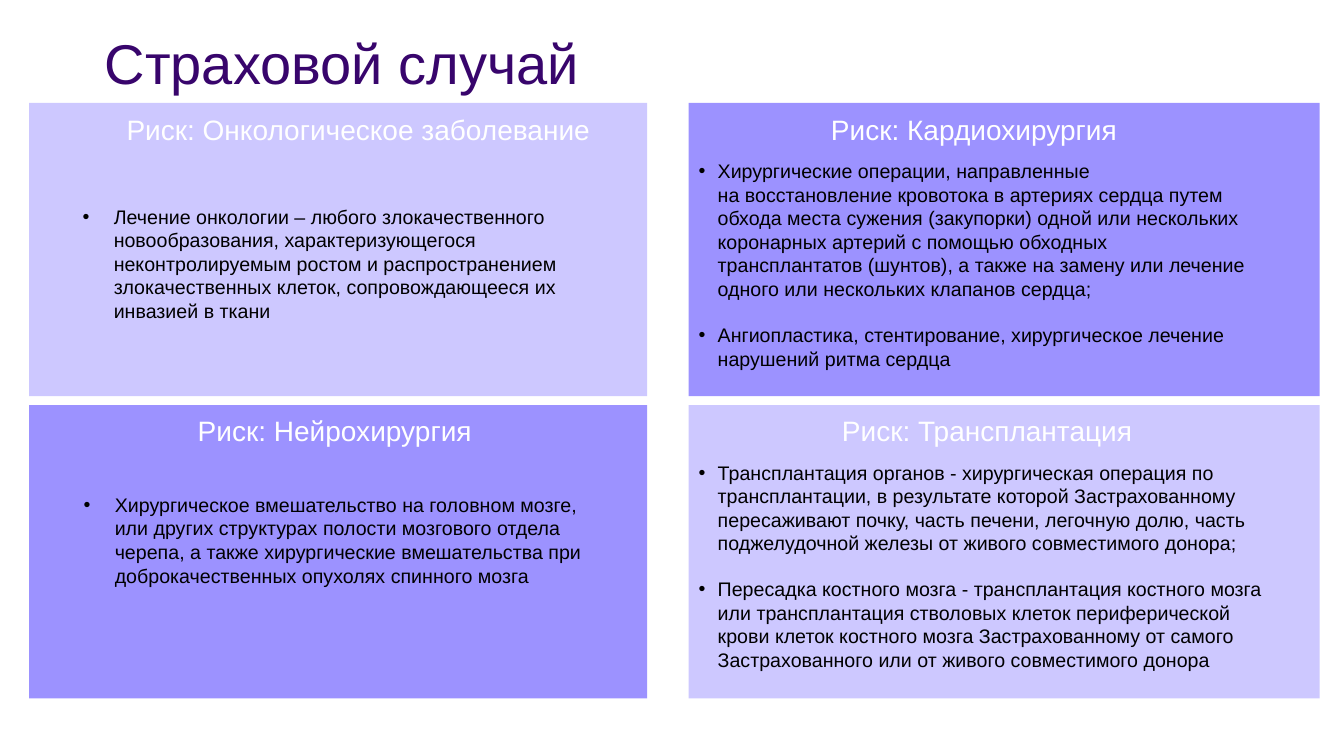
"""Build the slide of four insured risks in a two by two grid."""
from lxml.etree import SubElement
from pptx import Presentation
from pptx.dml.color import RGBColor
from pptx.enum.shapes import MSO_SHAPE as Shape
from pptx.enum.text import MSO_ANCHOR as Anchor, MSO_AUTO_SIZE as AutoSize, PP_ALIGN as Align
from pptx.oxml.ns import qn
from pptx.util import Inches, Pt

HEADLINE = "Страховой случай"
FONT, DARK, WHITE, BLACK = "Arial", "38056C", "FFFFFF", "000000"
LIGHT, STRONG = "CDC8FF", "9C92FF"
COLUMNS = [(0.29, 6.13), (6.83, 6.26)]
ROWS = [(1.02, 1.07), (4.02, 4.05)]
PANEL_HEIGHT, HEADING_HEIGHT = 2.91, 0.44
INDENTS = [0.31, 0.19]
RISKS = [
    {"cell": (0, 0), "heading": "Риск: Онкологическое заболевание",
     "heading_span": (1.14, 4.83), "body": (0.72, 1.98, 5.38, 1.6),
     "points": ["Лечение онкологии – любого злокачественного новообразования, "
                "характеризующегося неконтролируемым ростом и распространением "
                "злокачественных клеток, сопровождающееся их инвазией в ткани"]},
    {"cell": (1, 0), "heading": "Риск: Кардиохирургия",
     "heading_span": (8.13, 3.06), "body": (6.83, 1.53, 5.66, 2.22),
     "points": ["Хирургические операции, направленные \n"
                "на восстановление кровотока в артериях сердца путем обхода места "
                "сужения (закупорки) одной или нескольких коронарных артерий с помощью "
                "обходных трансплантатов (шунтов), а также на замену или лечение "
                "одного или нескольких клапанов сердца;",
                "Ангиопластика, стентирование, хирургическое лечение "
                "нарушений ритма сердца"]},
    {"cell": (0, 1), "heading": "Риск: Нейрохирургия",
     "heading_span": (1.85, 2.94), "body": (0.73, 4.84, 5.32, 1.04),
     "points": ["Хирургическое вмешательство на головном мозге, или других структурах "
                "полости мозгового отдела черепа, а также хирургические вмешательства "
                "при доброкачественных опухолях спинного мозга"]},
    {"cell": (1, 1), "heading": "Риск: Трансплантация",
     "heading_span": (8.24, 3.1), "body": (6.83, 4.52, 5.85, 2.46),
     "points": ["Трансплантация органов - хирургическая операция по трансплантации, "
                "в результате которой Застрахованному пересаживают почку, часть печени, "
                "легочную долю, часть поджелудочной железы от живого совместимого донора;",
                "Пересадка костного мозга - трансплантация костного мозга или "
                "трансплантация стволовых клеток периферической крови клеток костного "
                "мозга Застрахованному от самого Застрахованного или от живого "
                "совместимого донора"]},
]


def rgb(colour):
    """Turn a hex string into a colour."""
    return RGBColor.from_string(colour)


def write(paragraph, text, size, colour):
    """Add text as formatted runs, with a line break at each newline."""
    for number, line in enumerate(text.split("\n")):
        if number:
            paragraph.add_line_break()
        run = paragraph.add_run()
        run.text = line
        run.font.name, run.font.size = FONT, Pt(size)
        run.font.color.rgb = rgb(colour)


def add_panel(slide, column, row):
    """Draw the coloured rectangle of one grid cell."""
    left, width = COLUMNS[column]
    box = map(Inches, (left, ROWS[row][0], width, PANEL_HEIGHT))
    panel = slide.shapes.add_shape(Shape.RECTANGLE, *box)
    panel.shadow.inherit = False
    panel.fill.solid()
    panel.fill.fore_color.rgb = rgb(LIGHT if column == row else STRONG)
    panel.line.fill.background()


def add_frame(slide, box, wrap):
    """Add a text box that grows with its text and return its frame."""
    frame = slide.shapes.add_textbox(*map(Inches, box)).text_frame
    frame.word_wrap = wrap
    frame.auto_size = AutoSize.SHAPE_TO_FIT_TEXT
    return frame


def add_heading(slide, risk):
    """Write the centred heading of a risk."""
    left, width = risk["heading_span"]
    top = ROWS[risk["cell"][1]][1]
    heading = add_frame(slide, (left, top, width, HEADING_HEIGHT), False).paragraphs[0]
    heading.alignment = Align.CENTER
    write(heading, risk["heading"], 20, WHITE)


def add_points(slide, risk):
    """Write the bulleted points of a risk, one line apart."""
    frame = add_frame(slide, risk["body"], True)
    indent = Inches(INDENTS[risk["cell"][0]])
    for number, point in enumerate(risk["points"]):
        paragraph = frame.add_paragraph() if number else frame.paragraphs[0]
        if number:
            paragraph.space_before = Pt(16.1)
        props = paragraph._p.get_or_add_pPr()
        props.set("marL", str(indent))
        props.set("indent", str(-indent))
        SubElement(props, qn("a:buFont"), typeface=FONT)
        SubElement(props, qn("a:buChar"), char="•")
        write(paragraph, point, 14, BLACK)


def add_title(slide):
    """Place and format the title placeholder."""
    title = slide.shapes.title
    title.left, title.top, title.width, title.height = map(Inches, (1.04, 0.34, 5.01, 0.62))
    frame = title.text_frame
    frame.margin_left = frame.margin_top = frame.margin_right = frame.margin_bottom = 0
    frame.vertical_anchor = Anchor.TOP
    frame.word_wrap = True
    frame.auto_size = AutoSize.SHAPE_TO_FIT_TEXT
    headline = frame.paragraphs[0]
    headline.alignment = Align.LEFT
    headline.line_spacing = Pt(44)
    write(headline, HEADLINE, 40, DARK)


def main():
    """Build and save the slide."""
    deck = Presentation()
    deck.slide_width, deck.slide_height = Inches(13.33), Inches(7.5)
    slide = deck.slides.add_slide(deck.slide_layouts[5])
    add_title(slide)
    for risk in RISKS:
        add_panel(slide, *risk["cell"])
        add_heading(slide, risk)
        add_points(slide, risk)
    deck.save("out.pptx")


if __name__ == "__main__":
    main()
